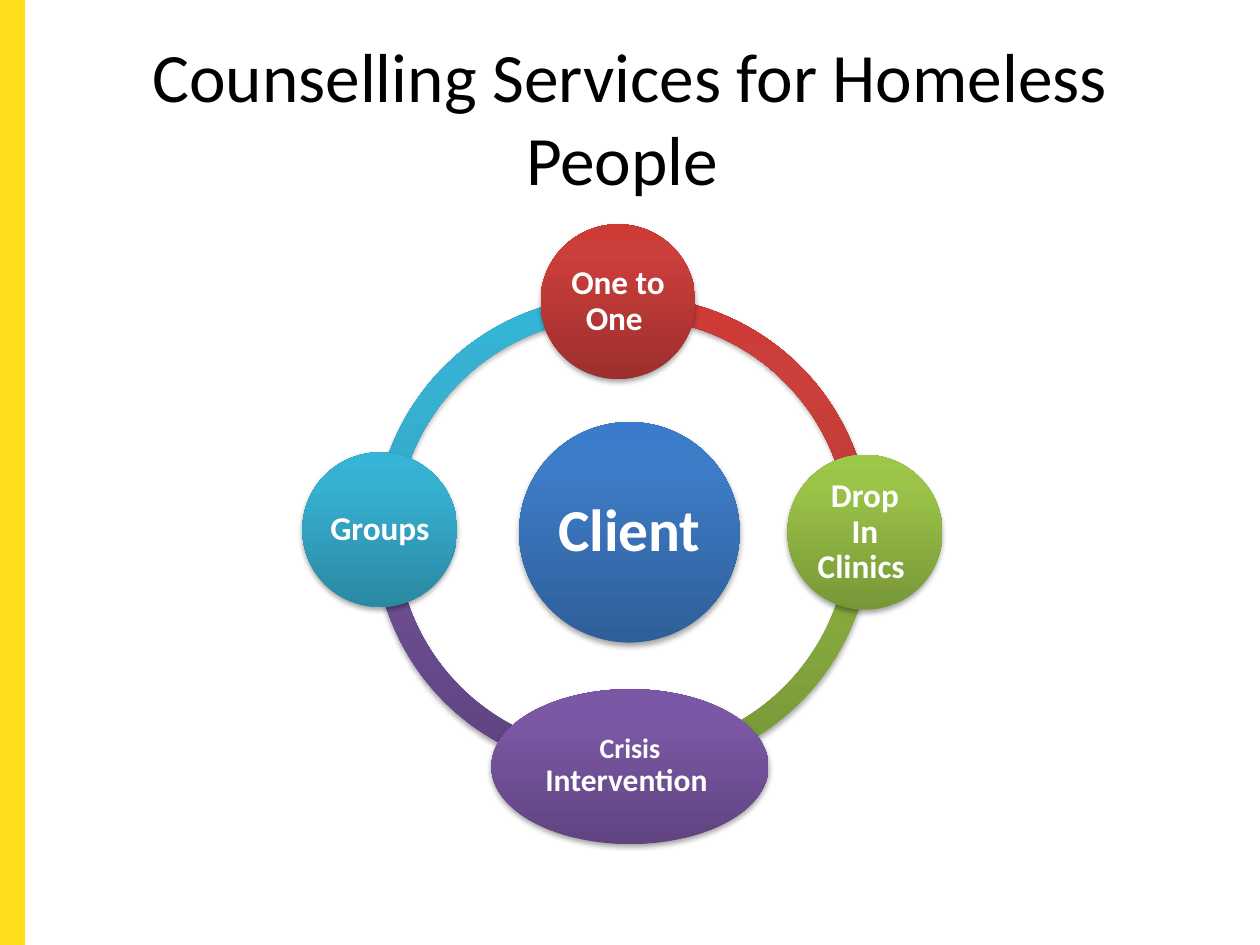
from typing import NamedTuple

import lxml.etree
import pptx
import pptx.dml.color
import pptx.enum.shapes
import pptx.enum.text
import pptx.oxml
import pptx.oxml.ns
import pptx.util
from pptx.dml.color import RGBColor
from pptx.util import Inches

FONT = "Calibri"
BLACK = RGBColor(0x00, 0x00, 0x00)
WHITE = RGBColor(0xFF, 0xFF, 0xFF)
YELLOW = RGBColor(0xFF, 0xDF, 0x1B)


class Gradient(NamedTuple):
    bottom: RGBColor
    upper: RGBColor
    top: RGBColor


class Arc(NamedTuple):
    left: float
    top: float
    start: float
    end: float
    gradient: Gradient


class TextRun(NamedTuple):
    text: str
    size: float


class Bubble(NamedTuple):
    left: float
    top: float
    width: float
    height: float
    inset: float
    gradient: Gradient
    runs: tuple[TextRun, ...]


BLUE = Gradient(RGBColor(0x2F, 0x5F, 0x99), RGBColor(0x3D, 0x7C, 0xC7), RGBColor(0x3A, 0x7C, 0xCB))
RED = Gradient(RGBColor(0x9C, 0x2F, 0x2D), RGBColor(0xCB, 0x3E, 0x3A), RGBColor(0xCE, 0x3B, 0x37))
GREEN = Gradient(RGBColor(0x77, 0x97, 0x37), RGBColor(0x9B, 0xC3, 0x48), RGBColor(0x9D, 0xC7, 0x46))
PURPLE = Gradient(RGBColor(0x5F, 0x44, 0x80), RGBColor(0x7B, 0x58, 0xA6), RGBColor(0x7C, 0x57, 0xA8))
TEAL = Gradient(RGBColor(0x2A, 0x88, 0xA2), RGBColor(0x37, 0xB1, 0xD2), RGBColor(0x34, 0xB4, 0xD6))
GRADIENT_POSITIONS = (0, 80000, 100000)

RING_SIZE = 3.81
RING_THICKNESS = 0.046
ADJUSTMENT_PER_DEGREE = 0.6
SMALL = 1.23

ARCS = (
    Arc(2.97, 2.35, 181.49, 270.95, TEAL),
    Arc(2.97, 2.32, 86.14, 180.7, PURPLE),
    Arc(3.1, 2.32, 0, 90, GREEN),
    Arc(3.1, 2.35, 267.07, 359.15, RED),
)
BUBBLES = (
    Bubble(4.12, 3.35, 1.75, 1.75, 0.05, BLUE, (TextRun("Client ", 34),)),
    Bubble(4.29, 1.78, SMALL, SMALL, 0.03, RED, (TextRun("One to One ", 19),)),
    Bubble(6.25, 3.61, SMALL, SMALL, 0.03, GREEN, (TextRun("Drop In Clinics ", 19),)),
    Bubble(3.9, 5.47, 2.2, SMALL, 0.02, PURPLE,
           (TextRun("Crisis ", 16), TextRun("Intervention ", 18))),
    Bubble(2.4, 3.59, SMALL, SMALL, 0.03, TEAL, (TextRun("Groups ", 19),)),
)


def add_child(parent, tag: str, **attributes: str):
    return lxml.etree.SubElement(parent, pptx.oxml.ns.qn(tag), attributes)


def style_shape(shape, gradient: Gradient) -> None:
    shape.fill.gradient()
    shape.fill.gradient_angle = 90
    properties = shape.element.spPr
    stops = properties.find(".//" + pptx.oxml.ns.qn("a:gsLst"))
    for stop in list(stops):
        stops.remove(stop)
    for position, color in zip(GRADIENT_POSITIONS, gradient):
        stop = add_child(stops, "a:gs", pos=str(position))
        add_child(stop, "a:srgbClr", val=str(color))
    shape.line.fill.background()
    shape.shadow.inherit = False
    effects = properties.find(pptx.oxml.ns.qn("a:effectLst"))
    shadow = add_child(effects, "a:outerShdw", blurRad="40000", dist="23000",
                       dir="5400000", rotWithShape="0")
    shadow_color = add_child(shadow, "a:srgbClr", val=str(BLACK))
    add_child(shadow_color, "a:alpha", val="35000")


def add_arc(slide, arc: Arc) -> None:
    shape = slide.shapes.add_shape(
        pptx.enum.shapes.MSO_SHAPE.BLOCK_ARC, Inches(arc.left), Inches(arc.top),
        Inches(RING_SIZE), Inches(RING_SIZE))
    shape.adjustments[0] = arc.start * ADJUSTMENT_PER_DEGREE
    shape.adjustments[1] = arc.end * ADJUSTMENT_PER_DEGREE
    shape.adjustments[2] = RING_THICKNESS
    style_shape(shape, arc.gradient)


def add_bubble(slide, bubble: Bubble) -> None:
    shape = slide.shapes.add_shape(
        pptx.enum.shapes.MSO_SHAPE.OVAL, Inches(bubble.left), Inches(bubble.top),
        Inches(bubble.width), Inches(bubble.height))
    style_shape(shape, bubble.gradient)
    frame = shape.text_frame
    frame.word_wrap = True
    frame.vertical_anchor = pptx.enum.text.MSO_ANCHOR.MIDDLE
    frame.margin_left = frame.margin_right = Inches(bubble.inset)
    frame.margin_top = frame.margin_bottom = Inches(bubble.inset)
    paragraph = frame.paragraphs[0]
    paragraph.alignment = pptx.enum.text.PP_ALIGN.CENTER
    paragraph.line_spacing = 0.9
    for text_run in bubble.runs:
        run = paragraph.add_run()
        run.text = text_run.text
        run.font.name = FONT
        run.font.size = pptx.util.Pt(text_run.size)
        run.font.bold = True
        run.font.color.rgb = WHITE


def add_side_bar(slide) -> None:
    bar = slide.shapes.add_shape(
        pptx.enum.shapes.MSO_SHAPE.RECTANGLE, 0, 0, Inches(0.2), Inches(7.5))
    bar.fill.solid()
    bar.fill.fore_color.rgb = YELLOW
    bar.line.fill.background()
    bar.shadow.inherit = False


def format_title(slide) -> None:
    title = slide.shapes.title
    title.left, title.top = Inches(0.5), Inches(0.3)
    title.width, title.height = Inches(9), Inches(1.25)
    title.text_frame.text = "Counselling Services for Homeless People "
    title.text_frame.vertical_anchor = pptx.enum.text.MSO_ANCHOR.MIDDLE
    title.text_frame.auto_size = pptx.enum.text.MSO_AUTO_SIZE.NONE
    paragraph = title.text_frame.paragraphs[0]
    paragraph.alignment = pptx.enum.text.PP_ALIGN.CENTER
    paragraph.font.name = FONT
    paragraph.font.size = pptx.util.Pt(39.6)
    paragraph.font.color.rgb = BLACK


def main() -> None:
    presentation = pptx.Presentation()
    presentation.slide_width = Inches(10)
    presentation.slide_height = Inches(7.5)
    slide = presentation.slides.add_slide(presentation.slide_layouts[5])
    add_side_bar(slide)
    format_title(slide)
    for arc in ARCS:
        add_arc(slide, arc)
    for bubble in BUBBLES:
        add_bubble(slide, bubble)
    presentation.save("out.pptx")


if __name__ == "__main__":
    main()
